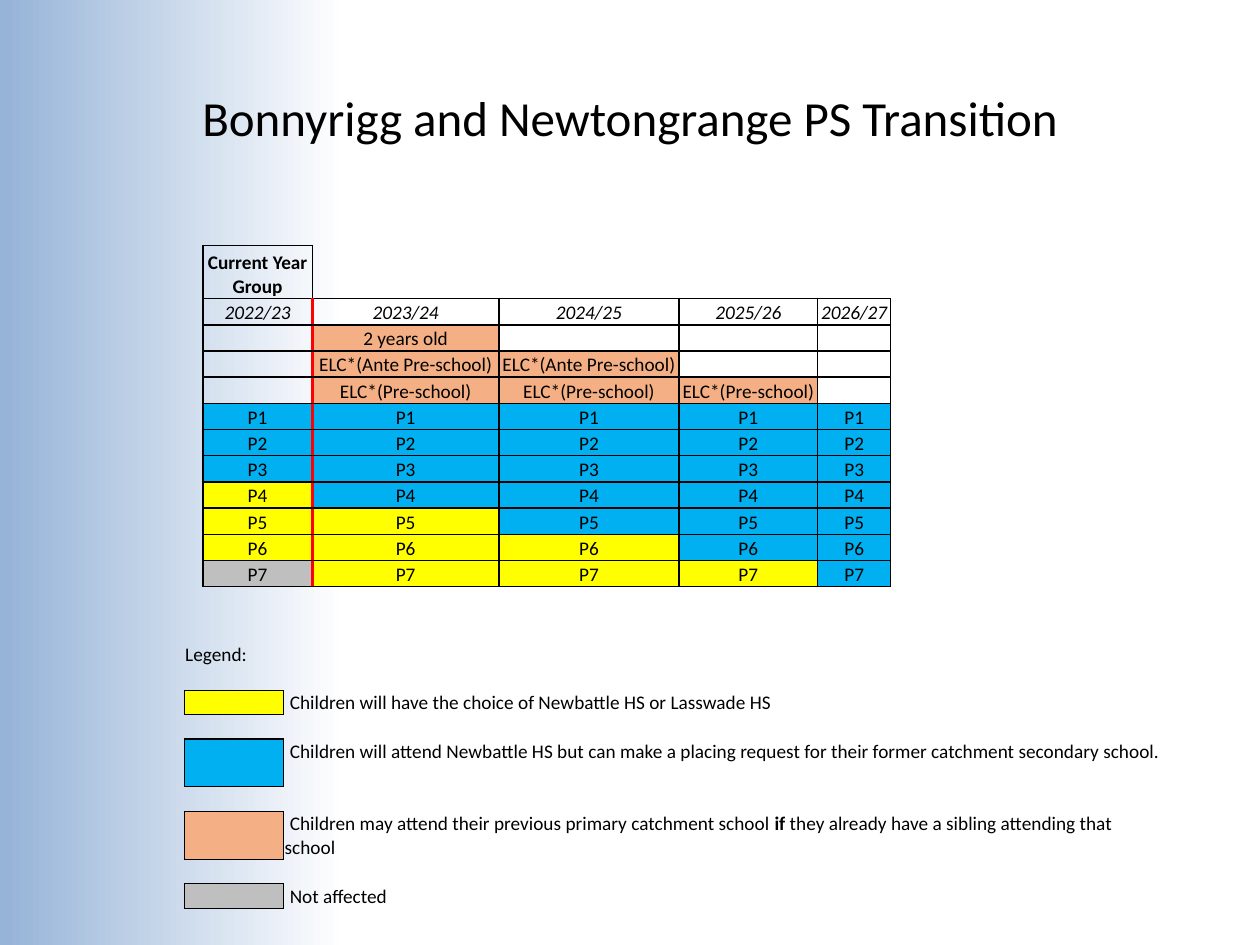
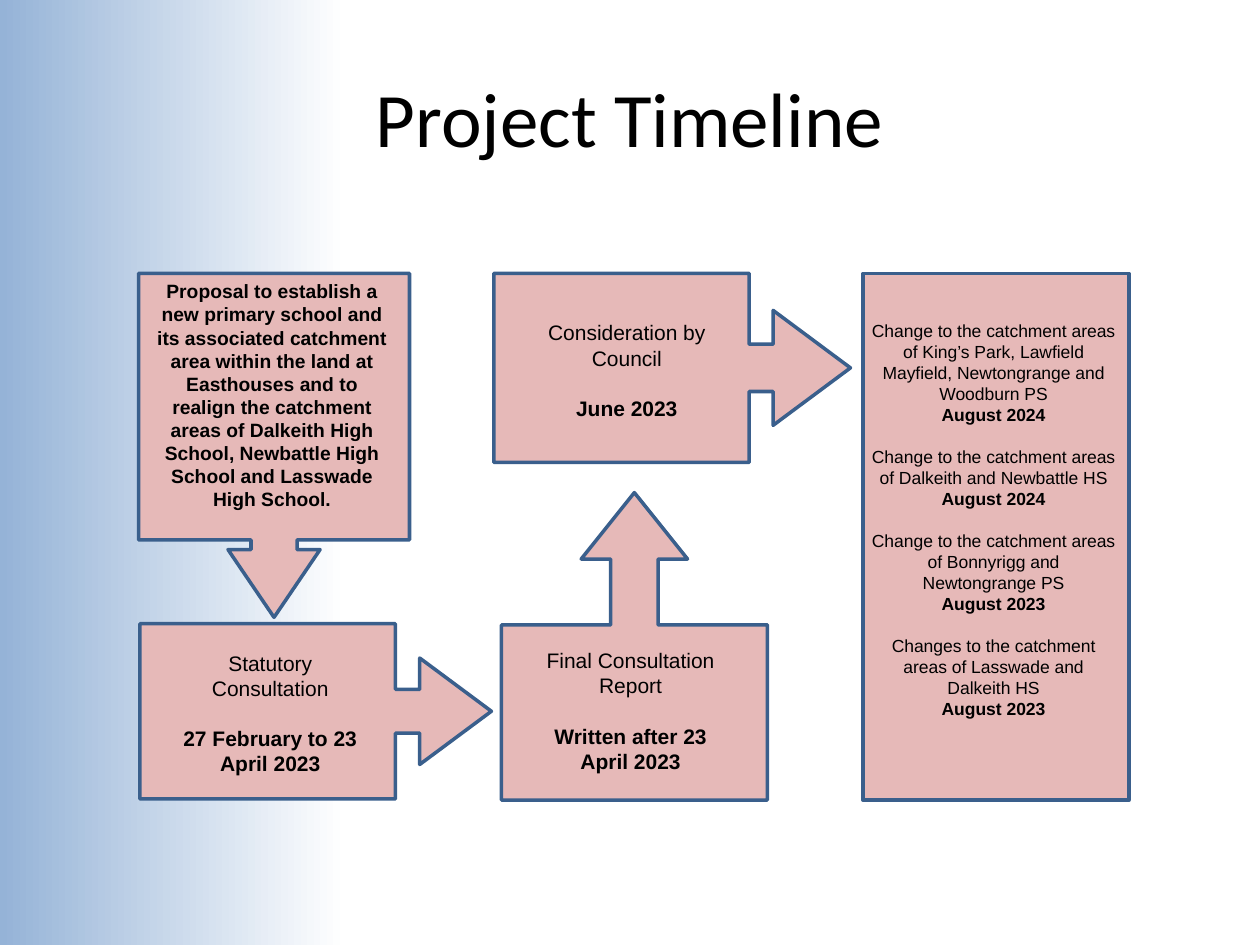
from dataclasses import dataclass

from lxml import etree
from pptx import Presentation
from pptx.dml.color import RGBColor
from pptx.enum.shapes import MSO_SHAPE
from pptx.enum.text import MSO_ANCHOR, PP_ALIGN
from pptx.oxml.ns import qn
from pptx.util import Inches, Pt

CENTER, LEFT = PP_ALIGN.CENTER, PP_ALIGN.LEFT
TOP, MIDDLE, BOTTOM = MSO_ANCHOR.TOP, MSO_ANCHOR.MIDDLE, MSO_ANCHOR.BOTTOM
RECTANGLE = MSO_SHAPE.RECTANGLE
DOWN_CALLOUT = MSO_SHAPE.DOWN_ARROW_CALLOUT
RIGHT_CALLOUT = MSO_SHAPE.RIGHT_ARROW_CALLOUT
UP_CALLOUT = MSO_SHAPE.UP_ARROW_CALLOUT
PLAIN_TABLE_STYLE = "{2D5ABB26-0587-4C30-8999-92F81FD0307C}"


@dataclass(frozen=True)
class Theme:
    heading_font: str = "Calibri"
    step_font: str = "Arial"
    table_size: int = 11
    proposal_size: int = 11
    step_size: int = 12
    change_size: int = 10
    blank_line: float = 1.2
    black: str = "000000"
    white: str = "FFFFFF"
    band: str = "95B3D7"
    divider: str = "FF0000"
    choice: str = "FFFF00"
    newbattle: str = "00B0F0"
    sibling: str = "F4B084"
    unaffected: str = "BFBFBF"
    step_fill: str = "E6B9B8"
    step_line: str = "3A5F8C"


THEME = Theme()


def rgb(value):
    return RGBColor.from_string(value)


def inches(box):
    return [Inches(length) for length in box]


def apply(target, values):
    for name, value in values.items():
        setattr(target, name, value)


def add_span(para, text, font, size, **style):
    span = para.add_run()
    span.text = text
    apply(span.font, {"name": font, "size": Pt(size), **style})
    span.font.color.rgb = rgb(THEME.black)


def add_text(page, box, paras, font, size, anchor=TOP):
    """Each para is (text, bold, gap), where gap leaves one line free above it."""
    frame = page.shapes.add_textbox(*inches(box)).text_frame
    apply(frame, {"word_wrap": True, "vertical_anchor": anchor})
    for index, (text, bold, gap) in enumerate(paras):
        para = frame.add_paragraph() if index else frame.paragraphs[0]
        para.alignment = CENTER
        if gap:
            para.space_before = Pt(size * THEME.blank_line)
        add_span(para, text, font, size, bold=bold)


def add_base(deck, title, title_size):
    page = deck.slides.add_slide(deck.slide_layouts[6])
    band = page.shapes.add_shape(RECTANGLE, *inches((0, 0, 2.75, 7.5)))
    band.shadow.inherit = False
    band.line.fill.background()
    band.fill.gradient()
    band.fill.gradient_angle = 0
    for stop, color in zip(band.fill.gradient_stops, (THEME.band, THEME.white)):
        stop.color.rgb = rgb(color)
    add_text(page, (0.5, 0.3, 9, 1.25), [(title, False, False)],
             THEME.heading_font, title_size, MIDDLE)
    return page


def add_plain_table(page, box, widths, heights):
    frame = page.shapes.add_table(len(heights), len(widths), *inches(box))
    table = frame.table
    apply(table, {"first_row": False, "horz_banding": False})
    frame._element.find(".//" + qn("a:tableStyleId")).text = PLAIN_TABLE_STYLE
    for column, width in zip(table.columns, widths):
        column.width = Inches(width)
    for row, height in zip(table.rows, heights):
        row.height = Inches(height)
    return table


def set_borders(cell, edges):
    """Edges maps L, R, T or B to (colour, points)."""
    props = cell._tc.get_or_add_tcPr()
    for side in "LRTB":
        if side in edges:
            color, points = edges[side]
            line = etree.SubElement(props, qn("a:ln" + side), w=str(Pt(points)))
            fill = etree.SubElement(line, qn("a:solidFill"))
            etree.SubElement(fill, qn("a:srgbClr"), val=color)


def fill_cell(cell, spans=(), color=None, edges=None, align=LEFT,
              anchor=BOTTOM, indent=0):
    """Spans are (text, style) pairs; an empty cell keeps the table's type size."""
    apply(cell, {"margin_left": Inches(0.01), "margin_right": Inches(0.01),
                 "margin_top": Inches(0.01), "margin_bottom": 0,
                 "vertical_anchor": anchor})
    set_borders(cell, edges or {})
    if color:
        cell.fill.solid()
        cell.fill.fore_color.rgb = rgb(color)
    else:
        cell.fill.background()
    para = cell.text_frame.paragraphs[0]
    para.alignment = align
    if indent:
        para._p.get_or_add_pPr().set("indent", str(Inches(indent)))
    for text, style in spans:
        add_span(para, text, THEME.heading_font, THEME.table_size, **style)
    if not spans:
        etree.SubElement(para._p, qn("a:endParaRPr"), sz=str(THEME.table_size * 100))


def schedule_entry(row, year):
    """Text, fill and style of one cell below the heading."""
    years = ["2022/23", "2023/24", "2024/25", "2025/26", "2026/27"]
    stages = ["2 years old", "ELC*(Ante Pre-school)", "ELC*(Pre-school)"]
    if row == 1:
        return years[year], None, {"italic": True}
    if row < 5:
        stage = row - 2
        if 1 <= year <= stage + 1:
            return stages[stage], THEME.sibling, {}
        return "", None, {}
    grade = row - 4
    color = THEME.choice if grade >= 4 + year else THEME.newbattle
    if year == 0 and grade == 7:
        color = THEME.unaffected
    return f"P{grade}", color, {}


def add_schedule(page, box):
    heading_height, row_count = 0.42, 12
    row_height = (box[3] - heading_height) / (row_count - 1)
    heights = [heading_height] + [row_height] * (row_count - 1)
    table = add_plain_table(page, box, (0.87, 1.48, 1.43, 1.1, 0.58), heights)
    black, red = (THEME.black, 1), (THEME.divider, 2.25)
    fill_cell(table.cell(0, 0), [("Current Year Group", {"bold": True})],
              edges=dict.fromkeys("LRTB", black), align=CENTER)
    for year in range(1, 5):
        fill_cell(table.cell(0, year), edges={"B": black})
    for row in range(1, row_count):
        for year in range(5):
            text, color, style = schedule_entry(row, year)
            edges = dict.fromkeys("LRTB", black)
            if year < 2:
                edges["LR"[year == 0]] = red
            fill_cell(table.cell(row, year), [(text, style)] if text else (),
                      color, edges, CENTER)


def add_legend(page, box):
    line = 0.19
    entries = {
        2: (THEME.choice, 0.5, 1, BOTTOM,
            [("Children will have the choice of Newbattle HS or Lasswade HS", {})]),
        4: (THEME.newbattle, 1, 0.5, TOP,
            [("Children will attend Newbattle HS but can make a placing request "
              "for their former catchment secondary school.", {})]),
        6: (THEME.sibling, 0.5, 0.5, BOTTOM,
            [("Children may attend their previous primary catchment school ", {}),
             ("if", {"bold": True}),
             (" they already have a sibling attending that school", {})]),
        8: (THEME.unaffected, 0.5, 0.5, BOTTOM, [("Not affected", {})]),
    }
    heights = [2 * line if row in (4, 6) else line for row in range(9)]
    table = add_plain_table(page, box, (0.79, 3.38, 1.21, 1.21, 1.21), heights)
    for row in range(9):
        for column in range(5):
            cell = table.cell(row, column)
            if row in entries and column < 2:
                color, top, bottom, anchor, spans = entries[row]
                if column:
                    fill_cell(cell, spans, anchor=anchor, indent=0.04)
                else:
                    widths = {"L": 0.5, "R": 0.5, "T": top, "B": bottom}
                    fill_cell(cell, color=color, edges={
                        side: (THEME.black, width) for side, width in widths.items()})
            elif row == column == 0:
                fill_cell(cell, [("Legend:", {})])
            else:
                fill_cell(cell)
    for row in entries:
        table.cell(row, 1).merge(table.cell(row, 4))


def add_step(page, kind, box, adjustments, text_box, paras, size):
    step = page.shapes.add_shape(kind, *inches(box))
    step.shadow.inherit = False
    for index, value in enumerate(adjustments):
        step.adjustments[index] = value
    step.fill.solid()
    step.fill.fore_color.rgb = rgb(THEME.step_fill)
    step.line.color.rgb = rgb(THEME.step_line)
    step.line.width = Pt(2)
    left, top, width, height = text_box
    add_text(page, (box[0] + left, box[1] + top, width, height), paras,
             THEME.step_font, size)


def build_transition(deck):
    page = add_base(deck, "Bonnyrigg and Newtongrange PS Transition", 28)
    add_legend(page, (1.46, 5.09, 7.8, 2.09))
    add_schedule(page, (1.61, 1.95, 5.46, 2.71))


def build_timeline(deck):
    page = add_base(deck, "Project Timeline", 44)
    upper, lower = 2.17, 4.95
    add_step(page, DOWN_CALLOUT, (1.1, upper, 2.15, 2.73),
             (0.17, 0.17, 0.25, 0.775), (0.01, 0, 2.1, 2.15),
             [("Proposal to establish a new primary school and its associated "
               "catchment area within the land at Easthouses and to realign the "
               "catchment areas of Dalkeith High School, Newbattle High School "
               "and Lasswade High School.", True, False)], THEME.proposal_size)
    add_step(page, RIGHT_CALLOUT, (1.11, lower, 2.79, 1.39),
             (0.25, 0.304, 0.409, 0.727), (0.09, 0.16, 1.89, 1.31),
             [("Statutory", False, False), ("Consultation", False, False),
              ("27 February to 23 April 2023", True, True)], THEME.step_size)
    add_step(page, UP_CALLOUT, (3.98, 3.91, 2.11, 2.44),
             (0.178, 0.2, 0.25, 0.57), (0.12, 1.18, 1.81, 1.11),
             [("Final Consultation Report", False, False),
              ("Written after 23 April 2023", True, True)], THEME.step_size)
    add_step(page, RIGHT_CALLOUT, (3.92, upper, 2.83, 1.5),
             (0.25, 0.304, 0.409, 0.716), (0.11, 0.32, 1.89, 0.91),
             [("Consideration by Council", False, False),
              ("June 2023", True, True)], THEME.step_size)
    changes = [
        ("Change to the catchment areas of King’s Park, Lawfield Mayfield, "
         "Newtongrange and Woodburn PS", "August 2024"),
        ("Change to the catchment areas of Dalkeith and Newbattle HS", "August 2024"),
        ("Change to the catchment areas of Bonnyrigg and Newtongrange PS",
         "August 2023"),
        ("Changes to the catchment areas of Lasswade and Dalkeith HS", "August 2023"),
    ]
    paras = []
    for index, (change, date) in enumerate(changes):
        paras += [(change, False, index > 0), (date, True, False)]
    add_step(page, RECTANGLE, (6.85, upper, 2.11, 4.18), (),
             (-0.03, 0.32, 2.13, 3.3), paras, THEME.change_size)


def main():
    deck = Presentation()
    apply(deck, {"slide_width": Inches(10), "slide_height": Inches(7.5)})
    build_transition(deck)
    build_timeline(deck)
    deck.save("out.pptx")


if __name__ == "__main__":
    main()
